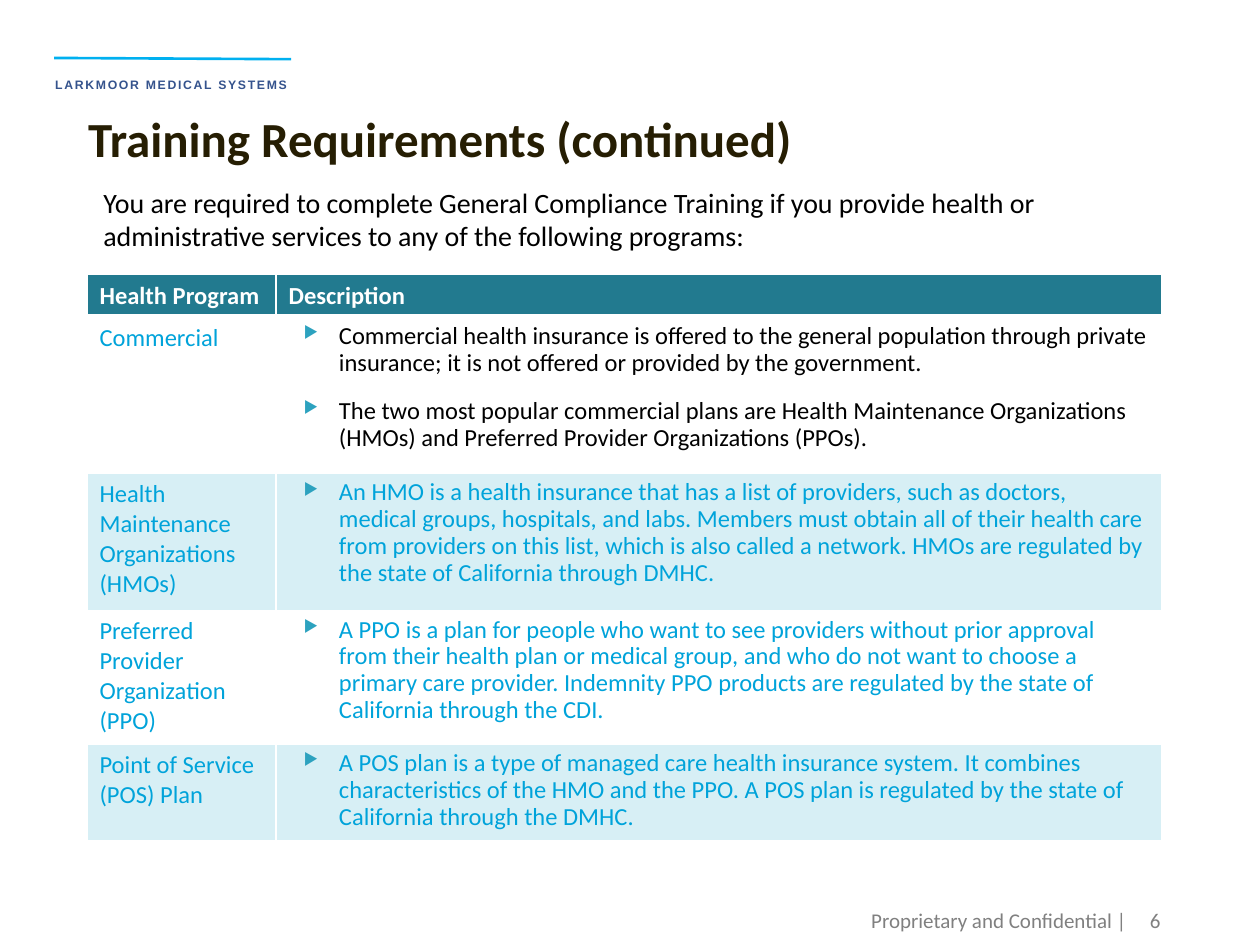
from pptx import Presentation
from pptx.dml.color import RGBColor
from pptx.enum.shapes import MSO_CONNECTOR
from pptx.enum.text import MSO_ANCHOR, PP_ALIGN
from pptx.oxml.ns import qn
from pptx.util import Inches, Pt
from lxml.etree import SubElement

WHITE = RGBColor(0xFF, 0xFF, 0xFF)
BLACK = RGBColor(0, 0, 0)
GRAY = RGBColor(0x80, 0x80, 0x80)
NAVY = RGBColor(0x35, 0x53, 0x8D)
SKY = RGBColor(0x00, 0xB0, 0xF0)
BLUE = RGBColor(0x00, 0xA3, 0xDA)
TEAL = RGBColor(0x22, 0x7A, 0x8F)
BULLET = RGBColor(0x2D, 0xA2, 0xBF)
PALE = RGBColor(0xD7, 0xEF, 0xF5)
BROWN = RGBColor(0x26, 0x1E, 0x03)


def style(p, size, color, bold=False, font="Calibri"):
    for r in p.runs:
        r.font.name, r.font.size, r.font.bold = font, Pt(size), bold
        r.font.color.rgb = color


def place(sp, left, top, width, height):
    sp.left, sp.top = Inches(left), Inches(top)
    sp.width, sp.height = Inches(width), Inches(height)


prs = Presentation()
prs.slide_width, prs.slide_height = Inches(10), Inches(7.5)
s = prs.slides.add_slide(prs.slide_layouts[1])

# Organization name under a rule
sp = s.shapes.add_textbox(Inches(0.34), Inches(0.46), Inches(2.04), Inches(0.29))
p = sp.text_frame.paragraphs[0]
p.text = "LARKMOOR MEDICAL SYSTEMS"
p.line_spacing = Pt(16)
style(p, 7, NAVY, True, "Arial")
p.runs[0].font._element.set("spc", "100")

rule = s.shapes.add_connector(MSO_CONNECTOR.STRAIGHT, Inches(0.43), Inches(0.46),
                              Inches(2.31), Inches(0.47))
rule.line.color.rgb = SKY
rule.line.width = Pt(1.5)
SubElement(rule._element.spPr, qn("a:effectLst"))

# Title and introduction
title, body = s.shapes.title, s.placeholders[1]
place(title, 0.6, 0.81, 7.33, 0.57)
place(body, 0.6, 1.42, 7.9, 0.64)
title.text_frame.text = "Training Requirements (continued)"
body.text_frame.text = ("You are required to complete General Compliance Training if you "
                        "provide health or administrative services to any of the "
                        "following programs:")
for sp, size, color, bold in [(title, 28, BROWN, True), (body, 16, BLACK, False)]:
    sp.text_frame.vertical_anchor = MSO_ANCHOR.TOP
    p = sp.text_frame.paragraphs[0]
    p.alignment = PP_ALIGN.LEFT
    p.space_before = Pt(0)
    style(p, size, color, bold)
pPr = body.text_frame.paragraphs[0]._p.get_or_add_pPr()
pPr.set("marL", str(Inches(0.12)))
pPr.set("indent", "0")
SubElement(pPr, qn("a:buNone"))

# Health program table: name, description bullets, text colour of the bullets
programs = [
    ("Commercial", [
        "Commercial health insurance is offered to the general population through "
        "private insurance; it is not offered or provided by the government.",
        "The two most popular commercial plans are Health Maintenance Organizations "
        "(HMOs) and Preferred Provider Organizations (PPOs)."], BLACK),
    ("Health Maintenance Organizations (HMOs)", [
        "An HMO is a health insurance that has a list of providers, such as doctors, "
        "medical groups, hospitals, and labs. Members must obtain all of their health "
        "care from providers on this list, which is also called a network. HMOs are "
        "regulated by the state of California through DMHC."], BLUE),
    ("Preferred Provider Organization (PPO)", [
        "A PPO is a plan for people who want to see providers without prior approval "
        "from their health plan or medical group, and who do not want to choose a "
        "primary care provider. Indemnity PPO products are regulated by the state of "
        "California through the CDI."], BLUE),
    ("Point of Service (POS) Plan", [
        "A POS plan is a type of managed care health insurance system. It combines "
        "characteristics of the HMO and the PPO. A POS plan is regulated by the state "
        "of California through the DMHC."], BLUE),
]
table = s.shapes.add_table(5, 2, Inches(0.69), Inches(2.18),
                           Inches(8.53), Inches(4.44)).table
table.horz_banding = False
for col, width in zip(table.columns, [1.5, 7.03]):
    col.width = Inches(width)
for row, height in zip(table.rows, [0.28, 1.24, 1.09, 1.06, 0.77]):
    row.height = Inches(height)

for cell, text in zip(table.rows[0].cells, ["Health Program", "Description"]):
    cell.text_frame.text = text
    style(cell.text_frame.paragraphs[0], 14, WHITE, True)

for i, (name, bullets, color) in enumerate(programs, 1):
    tf = table.cell(i, 0).text_frame
    tf.text = name
    style(tf.paragraphs[0], 14, BLUE)
    tf = table.cell(i, 1).text_frame
    for j, text in enumerate(bullets):
        p = tf.add_paragraph() if j else tf.paragraphs[0]
        p.text = text
        pPr = p._p.get_or_add_pPr()
        pPr.set("marL", str(Inches(0.4)))
        pPr.set("indent", str(Inches(-0.28)))
        SubElement(SubElement(pPr, qn("a:buClr")), qn("a:srgbClr"), val=str(BULLET))
        SubElement(pPr, qn("a:buSzPct"), val="68000")
        SubElement(pPr, qn("a:buChar"), char="▶")
        p.line_spacing = 0.9
        p.space_before = Pt(12 if j else 0)
        style(p, 14, color)

# White cell borders, thicker below the header; every second program is shaded
for i, row in enumerate(table.rows):
    for cell in row.cells:
        tcPr = cell._tc.get_or_add_tcPr()
        for side in "LRTB":
            thick = (i, side) in [(0, "B"), (1, "T")]
            ln = SubElement(tcPr, qn("a:ln" + side), w=str(Pt(3 if thick else 1)))
            SubElement(SubElement(ln, qn("a:solidFill")), qn("a:srgbClr"), val=str(WHITE))
        if i % 2:
            cell.fill.background()
        else:
            cell.fill.solid()
            cell.fill.fore_color.rgb = PALE if i else TEAL

# Footer and page number
for left, width, text in [(5.66, 3.38, "Proprietary and Confidential |"), (8.85, 0.46, "6")]:
    sp = s.shapes.add_textbox(Inches(left), Inches(7.1), Inches(width), Inches(0.4))
    tf = sp.text_frame
    tf.word_wrap = True
    tf.vertical_anchor = MSO_ANCHOR.MIDDLE
    tf.text = text
    tf.paragraphs[0].alignment = PP_ALIGN.RIGHT
    style(tf.paragraphs[0], 12, GRAY)

prs.save("out.pptx")
